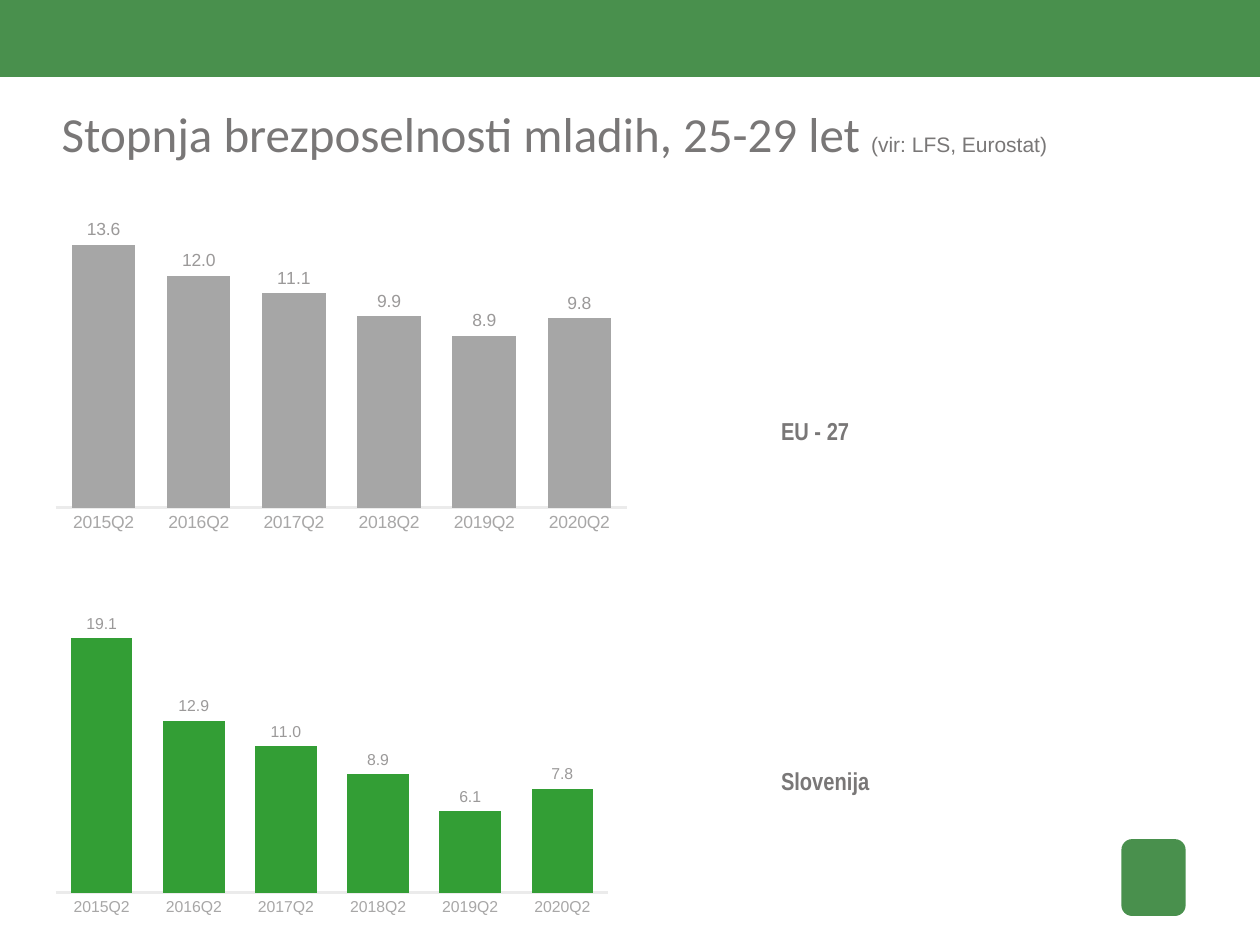
"""Build the slide on youth unemployment rates in the EU and Slovenia."""
import lxml.etree
import pptx
import pptx.chart.data
import pptx.dml.color
import pptx.enum.chart
import pptx.enum.shapes
import pptx.enum.text
import pptx.oxml
import pptx.oxml.ns
import pptx.util

Inches = pptx.util.Inches
Pt = pptx.util.Pt
RGBColor = pptx.dml.color.RGBColor
SHAPES = pptx.enum.shapes.MSO_SHAPE
AUTO_SIZE = pptx.enum.text.MSO_AUTO_SIZE
CHARTS = pptx.enum.chart

BRAND_GREEN = RGBColor(0x49, 0x90, 0x4D)
TEXT_GRAY = RGBColor(0x79, 0x77, 0x77)
AXIS_TEXT = RGBColor(0xA8, 0xA7, 0xA7)
AXIS_LINE = RGBColor(0xEB, 0xEB, 0xEB)
VALUE_TEXT = RGBColor(0x9B, 0x99, 0x99)
EU_GRAY = RGBColor(0xA6, 0xA6, 0xA6)
SLOVENIA_GREEN = RGBColor(0x33, 0x9E, 0x35)
WHITE = RGBColor(0xFF, 0xFF, 0xFF)

QUARTERS = [f"{year}Q2" for year in range(2015, 2021)]


def style_font(font, size, color, name="Arial", bold=False):
    font.name = name
    font.size = Pt(size)
    font.bold = bold
    font.color.rgb = color


def add_text(left, top, width, height, runs):
    frame = slide.shapes.add_textbox(
        Inches(left), Inches(top), Inches(width), Inches(height)
    ).text_frame
    frame.word_wrap = True
    for text, size, name, bold in runs:
        run = frame.paragraphs[0].add_run()
        run.text = text
        style_font(run.font, size, TEXT_GRAY, name, bold)
    return frame


presentation = pptx.Presentation()
presentation.slide_width = Inches(10)
presentation.slide_height = Inches(7.5)
slide = presentation.slides.add_slide(presentation.slide_layouts[6])

for kind, left, top, width, height in [
    (SHAPES.RECTANGLE, 0, -0.01, 10, 0.62),
    (SHAPES.ROUNDED_RECTANGLE, 8.9, 6.66, 0.51, 0.61),
]:
    block = slide.shapes.add_shape(
        kind, Inches(left), Inches(top), Inches(width), Inches(height)
    )
    block.shadow.inherit = False
    block.fill.solid()
    block.fill.fore_color.rgb = BRAND_GREEN
    block.line.fill.background()

title = add_text(0.49, 0.82, 9.26, 0.71, [
    ("Stopnja brezposelnosti mladih, 25-29 let ", 28, "Calibri", False),
    ("(vir: LFS, Eurostat)", 12, "Arial", False),
])
title.margin_left = title.margin_right = 0
title.margin_top = title.margin_bottom = 0

for region, top in [("EU - 27", 3.25), ("Slovenija", 6.03)]:
    region_label = add_text(
        6.1, top, 1.69, 0.34, [(region, 14, "Arial Narrow", True)]
    )
    region_label.auto_size = AUTO_SIZE.SHAPE_TO_FIT_TEXT

for top, width, height, rates, bar_color, size, axis_top in [
    (1.52, 4.72, 2.76, [13.6, 12, 11.1, 9.9, 8.9, 9.8], EU_GRAY, 10, 16),
    (4.38, 4.57, 2.95, [19.1, 12.9, 11, 8.9, 6.1, 7.8], SLOVENIA_GREEN, 9, 25),
]:
    rate_data = pptx.chart.data.CategoryChartData(number_format="0.0")
    rate_data.categories = QUARTERS
    rate_data.add_series("Series 1", rates)
    chart = slide.shapes.add_chart(
        CHARTS.XL_CHART_TYPE.COLUMN_CLUSTERED,
        Inches(0.35), Inches(top), Inches(width), Inches(height), rate_data,
    ).chart
    chart.has_legend = False
    chart.has_title = False
    style_font(chart.font, 10, TEXT_GRAY)

    background = pptx.oxml.parse_xml(
        f"<c:spPr {pptx.oxml.ns.nsdecls('c', 'a')}><a:solidFill>"
        f'<a:srgbClr val="{WHITE}"/></a:solidFill>'
        "<a:ln><a:noFill/></a:ln></c:spPr>"
    )
    chart.element.find(pptx.oxml.ns.qn("c:chart")).addnext(background)

    quarter_axis = chart.category_axis
    quarter_axis.major_tick_mark = CHARTS.XL_TICK_MARK.NONE
    quarter_axis.format.line.color.rgb = AXIS_LINE
    quarter_axis.format.line.width = Pt(1.5)
    style_font(quarter_axis.tick_labels.font, size, AXIS_TEXT)

    rate_axis = chart.value_axis
    rate_axis.minimum_scale = 0
    rate_axis.maximum_scale = axis_top
    rate_axis.has_major_gridlines = False
    rate_axis.major_tick_mark = CHARTS.XL_TICK_MARK.NONE
    rate_axis.tick_label_position = CHARTS.XL_TICK_LABEL_POSITION.NONE
    rate_axis.format.line.fill.background()
    rate_axis.tick_labels.number_format = "0.0"
    rate_axis.tick_labels.number_format_is_linked = False
    style_font(rate_axis.tick_labels.font, size, AXIS_TEXT)

    bars = chart.plots[0]
    bars.vary_by_categories = False
    bars.gap_width = 50
    bars.overlap = -27
    bars.series[0].format.fill.solid()
    bars.series[0].format.fill.fore_color.rgb = bar_color
    rate_labels = bars.series[0].data_labels
    rate_labels.show_value = True
    rate_labels.number_format = "0.0"
    rate_labels.number_format_is_linked = False
    rate_labels.position = CHARTS.XL_LABEL_POSITION.OUTSIDE_END
    style_font(rate_labels.font, size, VALUE_TEXT)

presentation.save("out.pptx")
